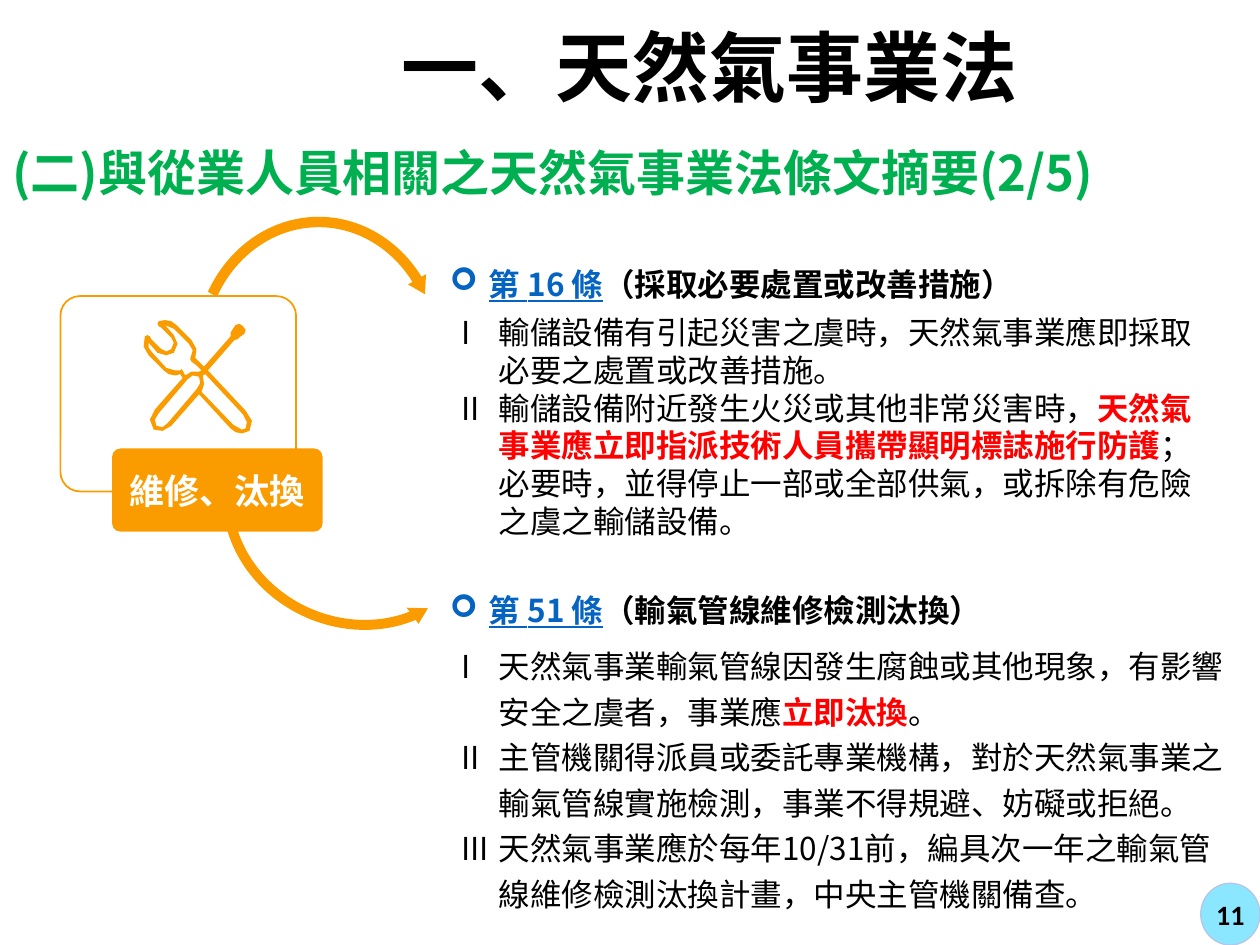
from lxml import etree
from pptx import Presentation
from pptx import util as u
from pptx.dml.color import RGBColor
from pptx.enum import shapes, text
from pptx.oxml import ns

FONT = "Noto Sans CJK SC"
BLACK, WHITE, RED, GREEN = "000000", "FFFFFF", "FF0000", "00B050"
BLUE, ORANGE = "0563C1", "FA9C00"
COLUMNS, ROWS = 100, 75
CELL = u.Inches(0.1)
ARROW = (0.04, 4.71, 22.47, 90.25, 0.04)

ARTICLE_16 = [
    [("第 16 條", BLUE, True), ("（採取必要處置或改善措施）", BLACK, True)],
    [("I\t輸儲設備有引起災害之虞時，天然氣事業應即採取必要之處置或改善措施。", BLACK, False)],
    [("II\t輸儲設備附近發生火災或其他非常災害時，", BLACK, False),
     ("天然氣事業應立即指派技術人員攜帶顯明標誌施行防護", RED, True),
     ("；必要時，並得停止一部或全部供氣，或拆除有危險之虞之輸儲設備。", BLACK, False)],
]
ARTICLE_51 = [
    [("第 51 條", BLUE, True), ("（輸氣管線維修檢測汰換）", BLACK, True)],
    [("I\t天然氣事業輸氣管線因發生腐蝕或其他現象，有影響安全之虞者，事業應", BLACK, False),
     ("立即汰換", RED, True), ("。", BLACK, False)],
    [("II\t主管機關得派員或委託專業機構，對於天然氣事業之輸氣管線實施檢測，事業不得規避、妨礙或拒絕。",
      BLACK, False)],
    [("III\t天然氣事業應於每年10/31前，編具次一年之輸氣管線維修檢測汰換計畫，中央主管機關備查。",
      BLACK, False)],
]

TOOL_CONTOURS = [
    [(195, 326), (165, 294), (186, 270), (189, 269), (191, 267), (194, 265), (195, 262), (193, 259),
     (190, 257), (187, 258), (185, 261), (183, 264), (183, 267), (162, 291), (158, 287), (155, 284),
     (156, 277), (152, 270), (140, 258), (136, 255), (131, 254), (126, 255), (125, 257), (126, 259),
     (128, 260), (136, 268), (138, 272), (136, 277), (132, 279), (128, 277), (120, 269), (119, 267),
     (117, 266), (115, 267), (114, 275), (118, 282), (130, 294), (134, 297), (139, 298), (143, 297),
     (145, 300), (123, 325), (119, 333), (122, 341), (129, 342), (136, 338), (158, 313), (183, 340),
     (187, 343), (192, 344), (198, 342), (200, 334)],
    [(144, 293), (143, 294), (139, 294), (132, 292), (121, 280), (118, 276), (118, 272), (125, 280),
     (132, 282), (138, 280), (141, 273), (138, 266), (131, 258), (138, 261), (150, 273), (153, 278),
     (151, 285), (152, 287), (156, 290), (160, 294), (158, 295), (152, 295), (147, 298), (145, 294)],
    [(133, 336), (129, 339), (124, 338), (123, 333), (126, 328), (149, 301), (153, 298), (158, 299),
     (159, 304), (156, 309)],
    [(195, 340), (192, 341), (185, 337), (160, 311), (162, 305), (161, 298), (163, 297), (193, 329),
     (196, 335)],
]


def color(value):
    return RGBColor.from_string(value)


def grid(*cells):
    return [round(cell * CELL) for cell in cells]


def place(shape, *cells):
    shape.left, shape.top, shape.width, shape.height = grid(*cells)


def add_run(paragraph, words, size, value, bold=True, font=FONT):
    run = paragraph.add_run()
    run.text = words
    run.font.size = u.Pt(size)
    run.font.bold = bold
    run.font.name = font
    run.font.color.rgb = color(value)
    etree.SubElement(run.font._element, ns.qn("a:ea"), typeface=font)
    return run


def paint(shape, fill=None, line=None, width=1):
    shape.shadow.inherit = False
    if fill:
        shape.fill.solid()
        shape.fill.fore_color.rgb = color(fill)
    else:
        shape.fill.background()
    if line:
        shape.line.color.rgb = color(line)
        shape.line.width = u.Pt(width)
    else:
        shape.line.fill.background()


def add_preset(slide, preset, cells, adjustments=(), **style):
    shape = slide.shapes.add_shape(preset, *grid(*cells))
    for index, value in enumerate(adjustments):
        shape.adjustments[index] = value
    paint(shape, **style)
    return shape


def add_label(shape, words, size, value, font=FONT):
    frame = shape.text_frame
    frame.margin_left = frame.margin_right = frame.margin_top = frame.margin_bottom = 0
    frame.vertical_anchor = text.MSO_ANCHOR.MIDDLE
    paragraph = frame.paragraphs[0]
    paragraph.alignment = text.PP_ALIGN.CENTER
    add_run(paragraph, words, size, value, font=font)


def set_hanging(paragraph, margin, hanging, bullet=None):
    properties = paragraph._p.get_or_add_pPr()
    properties.set("marL", str(u.Inches(margin)))
    properties.set("indent", str(-u.Inches(hanging)))
    if bullet:
        etree.SubElement(properties, ns.qn("a:buFont"), typeface="Wingdings")
        etree.SubElement(properties, ns.qn("a:buChar"), char=bullet)
    else:
        etree.SubElement(properties, ns.qn("a:buNone"))


def fill_article(placeholder, cells, article, spacing):
    place(placeholder, *cells)
    frame = placeholder.text_frame
    frame.auto_size = text.MSO_AUTO_SIZE.NONE
    frame.vertical_anchor = text.MSO_ANCHOR.TOP
    for index, runs in enumerate(article):
        heading = index == 0
        paragraph = frame.paragraphs[0] if heading else frame.add_paragraph()
        if heading:
            set_hanging(paragraph, 0.31, 0.31, "➢")
        else:
            set_hanging(paragraph, 0.39, 0.3)
        paragraph.line_spacing = u.Pt(spacing)
        paragraph.space_before = u.Pt(0)
        paragraph.space_after = u.Pt(6 if heading else 0)
        for words, value, bold in runs:
            run = add_run(paragraph, words, 18, value, bold)
            if value == BLUE:
                run.font.underline = True


def fill_title(placeholder, words):
    place(placeholder, 12.6, 0.1, 87.5, 11.1)
    frame = placeholder.text_frame
    frame.auto_size = text.MSO_AUTO_SIZE.NONE
    frame.vertical_anchor = text.MSO_ANCHOR.MIDDLE
    paragraph = frame.paragraphs[0]
    paragraph.alignment = text.PP_ALIGN.CENTER
    paragraph.line_spacing = 0.9
    add_run(paragraph, words, 44, BLACK)


def add_subtitle(slide, words):
    frame = slide.shapes.add_textbox(*grid(0, 11.3, 97.1, 4.7)).text_frame
    frame.word_wrap = True
    frame.vertical_anchor = text.MSO_ANCHOR.MIDDLE
    add_run(frame.paragraphs[0], words, 28, GREEN)


def add_tools(slide):
    first, *others = TOOL_CONTOURS
    builder = slide.shapes.build_freeform(*first[0], scale=u.Inches(0.01))
    builder.add_line_segments(first[1:], close=True)
    for contour in others:
        builder.move_to(*contour[0])
        builder.add_line_segments(contour[1:], close=True)
    paint(builder.convert_to_shape(), fill=ORANGE)


def main():
    presentation = Presentation()
    presentation.slide_width, presentation.slide_height = grid(COLUMNS, ROWS)
    slide = presentation.slides.add_slide(presentation.slide_layouts[3])
    title, upper, lower = list(slide.placeholders)[:3]

    fill_title(title, "一、天然氣事業法")
    fill_article(upper, (34.7, 20.5, 62.5, 23.1), ARTICLE_16, 21.6)
    fill_article(lower, (34.7, 45.8, 64.2, 26.8), ARTICLE_51, 26)
    add_subtitle(slide, "(二)與從業人員相關之天然氣事業法條文摘要(2/5)")

    preset = shapes.MSO_SHAPE
    add_preset(slide, preset.ROUNDED_RECTANGLE, (4.8, 23.5, 18.7, 15.5), (0.1,), line=ORANGE)
    lower_arrow = add_preset(slide, preset.LEFT_CIRCULAR_ARROW, (17.1, 30.4, 22, 19.8), ARROW, fill=ORANGE)
    lower_arrow.rotation = 24.1
    label = add_preset(slide, preset.ROUNDED_RECTANGLE, (8.9, 35.6, 16.7, 6.6), (0.1,), fill=ORANGE)
    add_label(label, "維修、汰換", 20, WHITE)
    upper_arrow = add_preset(slide, preset.LEFT_CIRCULAR_ARROW, (15, 16.8, 20.6, 22.7), ARROW, fill=ORANGE)
    upper_arrow._element.spPr.xfrm.set("flipV", "1")
    add_tools(slide)

    badge = add_preset(slide, preset.OVAL, (95.3, 70.1, 4.7, 4.9), fill="8BE6FF", line="B4C7E7", width=0.75)
    add_label(badge, "11", 16, BLACK, "Calibri")
    presentation.save("out.pptx")


if __name__ == "__main__":
    main()
